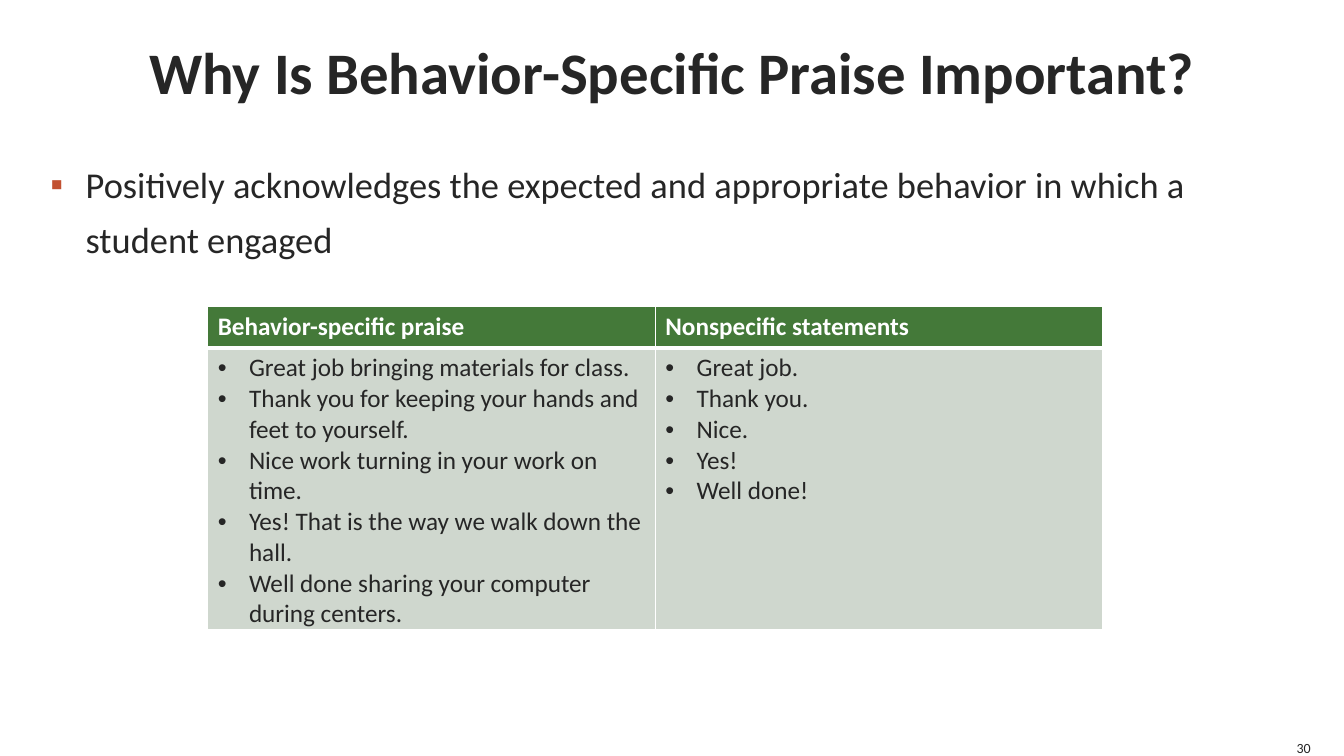
from lxml import etree
from pptx import Presentation
from pptx.dml.color import RGBColor
from pptx.enum.text import MSO_ANCHOR as Anchor, PP_ALIGN as Align
from pptx.oxml.ns import qn
from pptx.util import Inches, Pt

COLORS = {
    "text": "262626",
    "white": "FFFFFF",
    "accent": "C25131",
    "header": "447939",
    "body": "CFD7CE",
}


def write(frame, lines, size, color="text", bold=False, align=Align.LEFT,
          bullet=None, bullet_color="text", indent=0, spacing=None):
    """Fill a text frame with one paragraph per line."""
    for index, line in enumerate(lines):
        para = frame.paragraphs[0] if index == 0 else frame.add_paragraph()
        para.alignment = align
        if spacing:
            para.line_spacing = spacing
        if bullet:
            props = para._p.get_or_add_pPr()
            props.set("marL", str(Inches(indent)))
            props.set("indent", str(-Inches(indent)))
            tint = etree.SubElement(props, qn("a:buClr"))
            etree.SubElement(tint, qn("a:srgbClr"), val=COLORS[bullet_color])
            etree.SubElement(props, qn("a:buFont"), typeface="Arial")
            etree.SubElement(props, qn("a:buChar"), char=bullet)
        span = para.add_run()
        span.text = line
        span.font.name = "Calibri"
        span.font.size = Pt(size)
        span.font.bold = bold
        span.font.color.rgb = RGBColor.from_string(COLORS[color])


def add_box(left, top, width, height, anchor=Anchor.TOP, wrap=True):
    """Add a text box without margins and return its frame."""
    box = page.shapes.add_textbox(Inches(left), Inches(top), Inches(width), Inches(height))
    frame = box.text_frame
    frame.margin_left = frame.margin_right = frame.margin_top = frame.margin_bottom = 0
    frame.vertical_anchor = anchor
    frame.word_wrap = wrap
    return frame


deck = Presentation()
deck.slide_width, deck.slide_height = Inches(13.33), Inches(7.5)
page = deck.slides.add_slide(deck.slide_layouts[6])

# Title and main point
write(add_box(0.5, 0, 12.33, 1.4, anchor=Anchor.MIDDLE),
      ["Why Is Behavior-Specific Praise Important?"], 42, bold=True, align=Align.CENTER)
write(add_box(0.5, 1.5, 12.33, 4.75),
      ["Positively acknowledges the expected and appropriate behavior in which a student engaged"],
      26, bullet="▪", bullet_color="accent", indent=0.35, spacing=1.25)

# Table content, one entry per column
praise = {
    "Behavior-specific praise": [
        "Great job bringing materials for class.",
        "Thank you for keeping your hands and feet to yourself.",
        "Nice work turning in your work on time.",
        "Yes! That is the way we walk down the hall.",
        "Well done sharing your computer during centers.",
    ],
    "Nonspecific statements": ["Great job.", "Thank you.", "Nice.", "Yes!", "Well done!"],
}
table = page.shapes.add_table(2, len(praise), Inches(2.06), Inches(3.04),
                              Inches(8.88), Inches(3.21)).table
table.rows[0].height, table.rows[1].height = Inches(0.41), Inches(2.8)
for column, (heading, examples) in enumerate(praise.items()):
    table.columns[column].width = Inches(4.44)
    write(table.cell(0, column).text_frame, [heading], 18, color="white", bold=True)
    write(table.cell(1, column).text_frame, examples, 18, bullet="•", indent=0.31)

# White cell borders, thicker below the header, then the fills
for row, fill in enumerate(["header", "body"]):
    thick_side = "lnB" if row == 0 else "lnT"
    for column in range(len(praise)):
        cell = table.cell(row, column)
        props = cell._tc.get_or_add_tcPr()
        for side in ("lnL", "lnR", "lnT", "lnB"):
            width = Pt(3 if side == thick_side else 1)
            border = etree.SubElement(props, qn(f"a:{side}"), w=str(width))
            paint = etree.SubElement(border, qn("a:solidFill"))
            etree.SubElement(paint, qn("a:srgbClr"), val=COLORS["white"])
        cell.fill.solid()
        cell.fill.fore_color.rgb = RGBColor.from_string(COLORS[fill])

# Page number
write(add_box(12.83, 7.33, 0.17, 0.17, anchor=Anchor.BOTTOM, wrap=False),
      ["30"], 10, align=Align.RIGHT)

deck.save("out.pptx")
